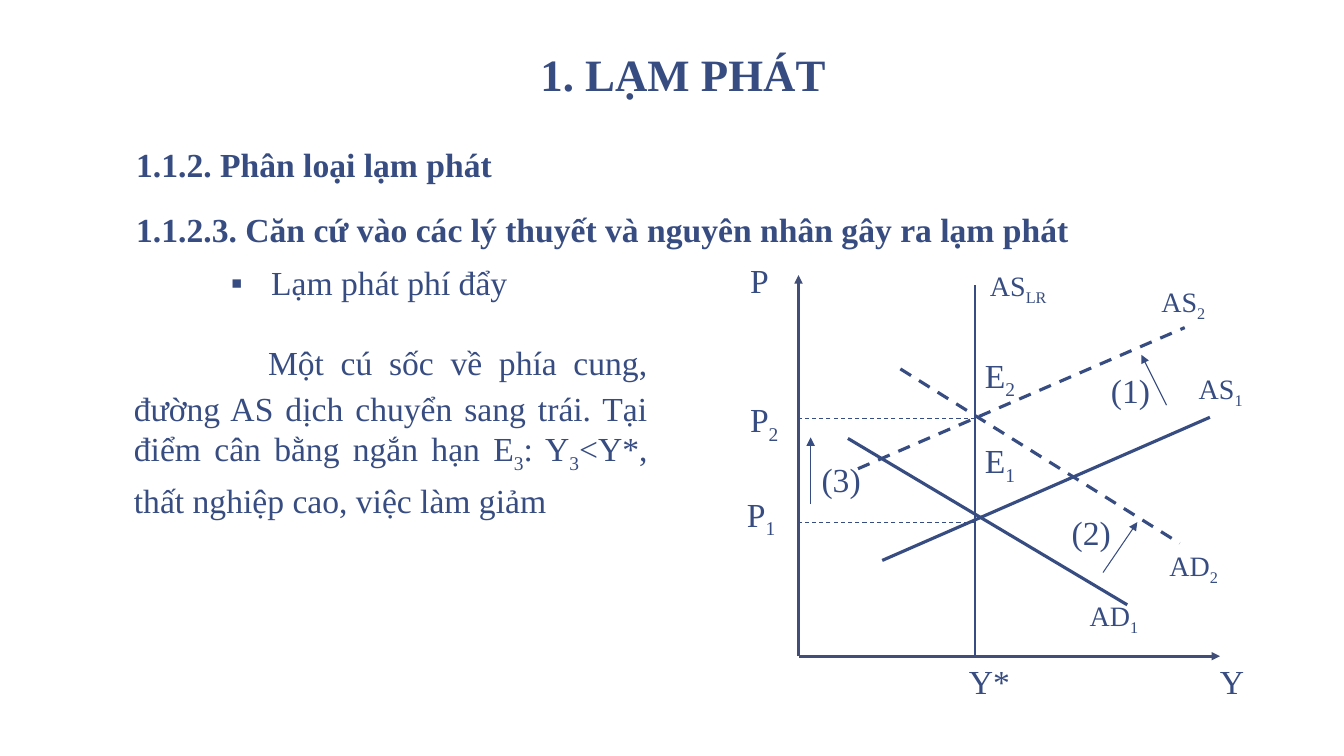
"""Builds the slide on cost-push inflation with its AS-AD diagram."""
from lxml.etree import SubElement
from pptx import Presentation
from pptx.dml.color import RGBColor
from pptx.enum.dml import MSO_LINE
from pptx.enum.shapes import MSO_CONNECTOR
from pptx.enum.text import MSO_ANCHOR, PP_ALIGN
from pptx.oxml.ns import qn
from pptx.util import Inches, Pt

COLORS = {"text": "374C81", "axis": "414E77", "page": "FFFFFF"}
FONT = "Times New Roman"


class Painter:
    def __init__(self, page):
        self.page = page
        background = page.background.fill
        background.solid()
        background.fore_color.rgb = RGBColor.from_string(COLORS["page"])

    def box(self, left, top, width, height, inset=(0.1, 0.05), anchor=MSO_ANCHOR.TOP):
        shape = self.page.shapes.add_textbox(
            Inches(left), Inches(top), Inches(width), Inches(height))
        frame = shape.text_frame
        frame.word_wrap = True
        frame.vertical_anchor = anchor
        frame.margin_left = frame.margin_right = Inches(inset[0])
        frame.margin_top = frame.margin_bottom = Inches(inset[1])
        return frame

    def fill_para(self, para, text, size=24, bold=False, align=PP_ALIGN.LEFT,
                  spacing=None, before=0, margin=0, indent=0, bullet=None):
        properties = para._p.get_or_add_pPr()
        properties.set("marL", str(Inches(margin)))
        properties.set("indent", str(Inches(indent)))
        if bullet:
            SubElement(properties, qn("a:buFont")).set("typeface", FONT)
            SubElement(properties, qn("a:buChar")).set("char", bullet)
        para.alignment = align
        para.space_before = Pt(before)
        if spacing:
            para.line_spacing = spacing
        for index, part in enumerate(text.split("_")):
            span = para.add_run()
            span.text = part
            span.font.name = FONT
            span.font.size = Pt(size)
            span.font.bold = bold
            span.font.color.rgb = RGBColor.from_string(COLORS["text"])
            if index % 2:
                span.font._element.set("baseline", "-25000")

    def label(self, text, left, top, width=0.75, size=24):
        frame = self.box(left, top, width, 0.5 if size == 24 else 0.43)
        self.fill_para(frame.paragraphs[0], text, size)

    def line(self, start, end, weight, color="text", dashed=False, arrow=False):
        connector = self.page.shapes.add_connector(
            MSO_CONNECTOR.STRAIGHT, *(Inches(value) for value in start + end))
        connector.line.color.rgb = RGBColor.from_string(COLORS[color])
        connector.line.width = Pt(weight)
        if dashed:
            connector.line.dash_style = MSO_LINE.DASH
        if arrow:
            SubElement(connector.line._get_or_add_ln(), qn("a:tailEnd")).set("type", "triangle")
        SubElement(connector._element.spPr, qn("a:effectLst"))


def add_texts(painter):
    title = painter.box(1.22, 0.08, 11.11, 0.99, (0.13, 0.07), MSO_ANCHOR.BOTTOM)
    painter.fill_para(title.paragraphs[0], "1. LẠM PHÁT", 32, True, PP_ALIGN.CENTER, 0.85)

    body = painter.box(1.22, 1.39, 11.11, 1.75, (0.13, 0.07))
    heading = dict(bold=True, spacing=0.95, margin=0.33, indent=-0.33)
    painter.fill_para(body.paragraphs[0], "1.1.2. Phân loại lạm phát", **heading)
    painter.fill_para(body.add_paragraph(),
                      "1.1.2.3. Căn cứ vào các lý thuyết và nguyên nhân gây ra lạm phát",
                      before=18.7, **heading)
    painter.fill_para(body.add_paragraph(), "Lạm phát phí đẩy", spacing=0.95,
                      before=10.7, margin=1.34, indent=-0.4, bullet="▪")

    explanation = painter.box(1.23, 3.28, 5.29, 1.95)
    painter.fill_para(explanation.paragraphs[0],
                      "Một cú sốc về phía cung, đường AS dịch chuyển sang trái. Tại điểm "
                      "cân bằng ngắn hạn E_3_: Y_3_<Y*, thất nghiệp cao, việc làm giảm",
                      align=PP_ALIGN.JUSTIFY, spacing=Pt(33), indent=1.33)


def add_diagram(painter):
    axis_x, axis_y, potential = 7.92, 6.51, 9.67
    painter.line((potential, axis_y), (potential, 2.83), 1.25)

    for start, end, dashed in (
        ((8.41, 4.35), (11.18, 6), False),
        ((8.93, 3.66), (11.7, 5.39), True),
        ((8.75, 5.56), (12, 4.14), False),
        ((8.51, 4.65), (11.75, 3.25), True),
    ):
        painter.line(start, end, 2.25, dashed=dashed)

    for price in (4.15, 5.18):
        painter.line((potential, price), (axis_x, price), 0.75, dashed=True)

    for start, end in (
        ((8.04, 5), (8.04, 4.34)),
        ((10.94, 5.68), (11.28, 5.18)),
        ((11.57, 4.02), (11.32, 3.52)),
    ):
        painter.line(start, end, 0.75, arrow=True)

    for end in ((axis_x, 2.73), (12.1, axis_y)):
        painter.line((axis_x, axis_y), end, 2, "axis", arrow=True)

    for text, left, top in (
        ("(1)", 10.92, 3.62), ("(2)", 10.53, 5.03), ("(3)", 8.05, 4.5),
        ("E_2", potential, 3.47), ("E_1", potential, 4.32),
        ("P", 7.34, 2.53), ("P_2", 7.34, 3.91), ("P_1", 7.31, 4.85),
        ("Y*", 9.51, axis_y), ("Y", 12, axis_y),
    ):
        painter.label(text, left, top)

    for text, left, top in (
        ("AS_LR", 9.72, 2.61), ("AS_2", 11.42, 2.77), ("AS_1", 11.79, 3.64),
        ("AD_2", 11.5, 5.39), ("AD_1", 10.71, 5.89),
    ):
        painter.label(text, left, top, width=1, size=20)


def main():
    deck = Presentation()
    deck.slide_width, deck.slide_height = Inches(13.33), Inches(7.5)
    painter = Painter(deck.slides.add_slide(deck.slide_layouts[6]))
    add_texts(painter)
    add_diagram(painter)
    deck.save("out.pptx")


if __name__ == "__main__":
    main()
